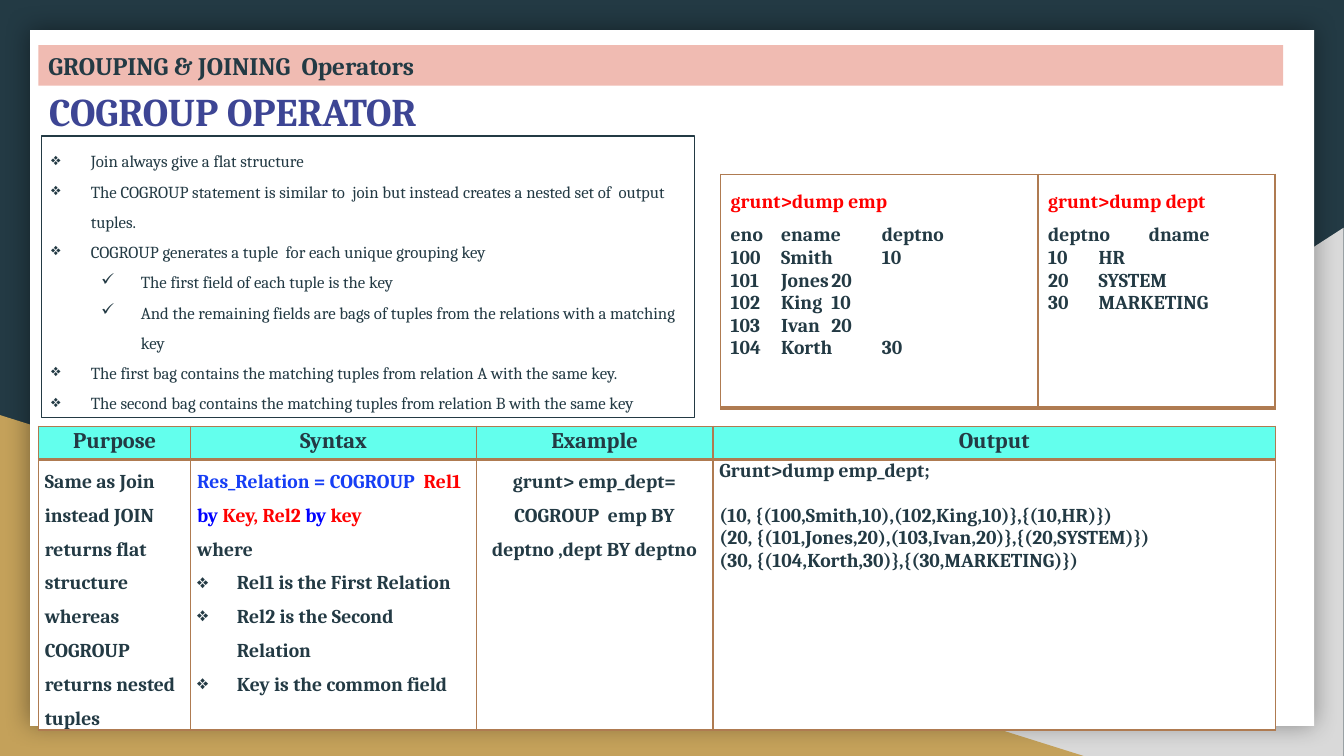
from dataclasses import dataclass

from lxml import etree
from pptx import Presentation
from pptx.dml.color import RGBColor
from pptx.enum.shapes import MSO_SHAPE
from pptx.enum.text import MSO_ANCHOR, MSO_AUTO_SIZE, PP_ALIGN
from pptx.oxml.ns import qn
from pptx.shapes.autoshape import Shape
from pptx.slide import Slide
from pptx.table import Table, _Cell
from pptx.text.text import TextFrame
from pptx.util import Cm, Pt

RECT, TRIANGLE = MSO_SHAPE.RECTANGLE, MSO_SHAPE.RIGHT_TRIANGLE
LEFT, CENTER = PP_ALIGN.LEFT, PP_ALIGN.CENTER
TOP, MIDDLE = MSO_ANCHOR.TOP, MSO_ANCHOR.MIDDLE
NO_AUTOFIT = MSO_AUTO_SIZE.NONE

FONT = "Cambria"
DARK = RGBColor(0x23, 0x3A, 0x44)
GRAY = RGBColor(0xD9, 0xD9, 0xD9)
GOLD = RGBColor(0xC4, 0xA1, 0x5A)
WHITE = RGBColor(0xFF, 0xFF, 0xFF)
PINK = RGBColor(0xF0, 0xBB, 0xB2)
INDIGO = RGBColor(0x3D, 0x45, 0x94)
CYAN = RGBColor(0x63, 0xFF, 0xED)
BROWN = RGBColor(0xAF, 0x7B, 0x51)
RED = RGBColor(0xFF, 0x00, 0x00)
BLUE = RGBColor(0x00, 0x00, 0xFF)
ROYAL = RGBColor(0x16, 0x3E, 0xF5)


@dataclass(frozen=True)
class Span:
    text: str
    color: RGBColor = DARK


@dataclass(frozen=True)
class Para:
    spans: tuple[Span, ...]
    spacing: float = 1.0
    align: PP_ALIGN = LEFT
    bullet: str = ""
    indent: float = 1.0
    before: float = 0


@dataclass(frozen=True)
class Box:
    left: float
    top: float
    width: float
    height: float


def line(text: str, spacing: float = 1.0, color: RGBColor = DARK, align: PP_ALIGN = LEFT,
         bullet: str = "", indent: float = 1.0, before: float = 0) -> Para:
    return Para((Span(text, color),), spacing, align, bullet, indent, before)


def write(tf: TextFrame, paras: list[Para], size: float, bold: bool = True) -> None:
    for i, para in enumerate(paras):
        p = tf.add_paragraph() if i else tf.paragraphs[0]
        p.text = para.spans[0].text
        for span in para.spans[1:]:
            p.add_run().text = span.text
        p.alignment = para.align
        p.line_spacing = para.spacing
        p.space_before = Pt(para.before)
        p.space_after = Pt(0)
        if para.bullet:
            pPr = p._p.get_or_add_pPr()
            pPr.set("marL", str(Cm(para.indent)))
            pPr.set("indent", str(-Cm(1)))
            etree.SubElement(pPr, qn("a:buChar")).set("char", para.bullet)
        for r, span in zip(p.runs, para.spans):
            r.font.name = FONT
            r.font.size = Pt(size)
            r.font.bold = bold
            r.font.color.rgb = span.color


def add_panel(s: Slide, kind: MSO_SHAPE, box: Box, fill: RGBColor | None = None,
              border: RGBColor | None = None, anchor: MSO_ANCHOR = TOP) -> Shape:
    sp = s.shapes.add_shape(kind, Cm(box.left), Cm(box.top), Cm(box.width), Cm(box.height))
    sp.shadow.inherit = False
    if fill is None:
        sp.fill.background()
    else:
        sp.fill.solid()
        sp.fill.fore_color.rgb = fill
    if border is None:
        sp.line.fill.background()
    else:
        sp.line.color.rgb = border
        sp.line.width = Pt(1)
    sp.text_frame.word_wrap = True
    sp.text_frame.vertical_anchor = anchor
    return sp


def cast_shadow(sp: Shape) -> None:
    effects = sp.element.spPr.find(qn("a:effectLst"))
    outer = etree.SubElement(effects, qn("a:outerShdw"), blurRad=str(Pt(18)), dist="0",
                             algn="ctr", rotWithShape="0")
    color = etree.SubElement(outer, qn("a:srgbClr"), val="000000")
    etree.SubElement(color, qn("a:alpha"), val="40000")


def style_cell(cell: _Cell, fill: RGBColor, bottom: float) -> None:
    tcPr = cell._tc.get_or_add_tcPr()
    for side, width in (("L", 1), ("R", 1), ("T", 1), ("B", bottom)):
        ln = etree.SubElement(tcPr, qn(f"a:ln{side}"), w=str(Pt(width)))
        solid = etree.SubElement(ln, qn("a:solidFill"))
        etree.SubElement(solid, qn("a:srgbClr"), val=str(BROWN))
    cell.fill.solid()
    cell.fill.fore_color.rgb = fill


def add_grid(s: Slide, left: float, top: float, widths: list[float], heights: list[float]) -> Table:
    table = s.shapes.add_table(len(heights), len(widths), Cm(left), Cm(top),
                               Cm(sum(widths)), Cm(sum(heights))).table
    table.first_row = table.horz_banding = False
    for column, width in zip(table.columns, widths):
        column.width = Cm(width)
    for row, height in zip(table.rows, heights):
        row.height = Cm(height)
    return table


HEADERS = ["Purpose", "Syntax", "Example", "Output"]
DETAILS = [
    [line("Same as Join instead JOIN returns flat structure whereas COGROUP returns nested tuples", 1.5)],
    [
        Para((Span("Res_Relation = COGROUP  ", ROYAL), Span("Rel1 ", RED), Span("by ", BLUE),
              Span("Key, Rel2 ", RED), Span("by", BLUE), Span(" key", RED)), 1.5),
        line("where", 1.5),
        *(line(text, 1.5, bullet="❖") for text in (
            "Rel1 is the First Relation", "Rel2 is the Second Relation", "Key is the common field")),
    ],
    [line("grunt> emp_dept= COGROUP  emp BY deptno ,dept BY deptno", 1.5, align=CENTER)],
    [
        line("Grunt>dump emp_dept;"),
        line("(10, {(100,Smith,10),(102,King,10)},{(10,HR)})", before=16),
        line("(20, {(101,Jones,20),(103,Ivan,20)},{(20,SYSTEM)})"),
        line("(30, {(104,Korth,30)},{(30,MARKETING)})"),
    ],
]
DUMPS = [
    ("grunt>dump emp", "eno\tename\tdeptno",
     ["100\tSmith\t10", "101\tJones\t20", "102\tKing\t10", "103\tIvan\t20", "104\tKorth\t30"]),
    ("grunt>dump dept", "deptno\tdname", ["10\tHR", "20\tSYSTEM", "30\tMARKETING"]),
]
NOTES = [
    ("❖", 1, "Join always give a flat structure"),
    ("❖", 1, "The COGROUP statement is similar to  join but instead creates a nested set of  output tuples."),
    ("❖", 1, "COGROUP generates a tuple  for each unique grouping key"),
    ("✓", 2.26, "The first field of each tuple is the key"),
    ("✓", 2.26, "And the remaining fields are bags of tuples from the relations with a matching key"),
    ("❖", 1, "The first bag contains the matching tuples from relation A with the same key."),
    ("❖", 1, "The second bag contains the matching tuples from relation B with the same key"),
]


def main() -> None:
    prs = Presentation()
    prs.slide_width, prs.slide_height = Cm(33.87), Cm(19.05)
    s = prs.slides.add_slide(prs.slide_layouts[5])
    s.background.fill.solid()
    s.background.fill.fore_color.rgb = DARK

    corner = add_panel(s, TRIANGLE, Box(13.26, 5.74, 20.6, 13.31), GRAY)
    corner.element.spPr.find(qn("a:xfrm")).set("flipH", "1")
    add_panel(s, TRIANGLE, Box(0, 10.46, 27.31, 8.59), GOLD)
    cast_shadow(add_panel(s, RECT, Box(0.76, 0.76, 32.36, 17.53), WHITE))
    banner = add_panel(s, RECT, Box(0.97, 1.14, 31.37, 1.02), PINK, anchor=MIDDLE)
    write(banner.text_frame, [line("GROUPING & JOINING  Operators")], 18)

    summary = add_grid(s, 0.97, 10.74, [3.84, 7.19, 5.97, 14.17], [0.84, 6.55])
    for i, (header, detail) in enumerate(zip(HEADERS, DETAILS)):
        rows = (([line(header, 1.07, align=CENTER)], 16, CYAN, 3), (detail, 14, WHITE, 1))
        for j, (paras, size, fill, bottom) in enumerate(rows):
            cell = summary.cell(j, i)
            cell.margin_left = cell.margin_right = Cm(0.16)
            cell.margin_top = cell.margin_bottom = 0
            style_cell(cell, fill, bottom)
            write(cell.text_frame, paras, size)

    title = s.shapes.title
    title.left, title.top, title.width, title.height = Cm(0.71), Cm(2.06), Cm(10.31), Cm(1.45)
    tf = title.text_frame
    tf.word_wrap = False
    tf.auto_size = NO_AUTOFIT
    tf.vertical_anchor = MIDDLE
    write(tf, [line("COGROUP OPERATOR", color=INDIGO, align=CENTER)], 28)
    title.element.getparent().append(title.element)

    dumps = add_grid(s, 18.16, 4.39, [8, 5.97], [5.89])
    for i, (command, fields, records) in enumerate(DUMPS):
        cell = dumps.cell(0, i)
        style_cell(cell, WHITE, 3)
        write(cell.text_frame, [line(command, 1.5, RED), line(fields, 1.5), *map(line, records)], 14)

    notes = add_panel(s, RECT, Box(1.04, 3.43, 16.46, 7.09), border=DARK)
    write(notes.text_frame,
          [line(text, 1.5, bullet=bullet, indent=indent) for bullet, indent, text in NOTES], 12, False)

    prs.save("out.pptx")


if __name__ == "__main__":
    main()
